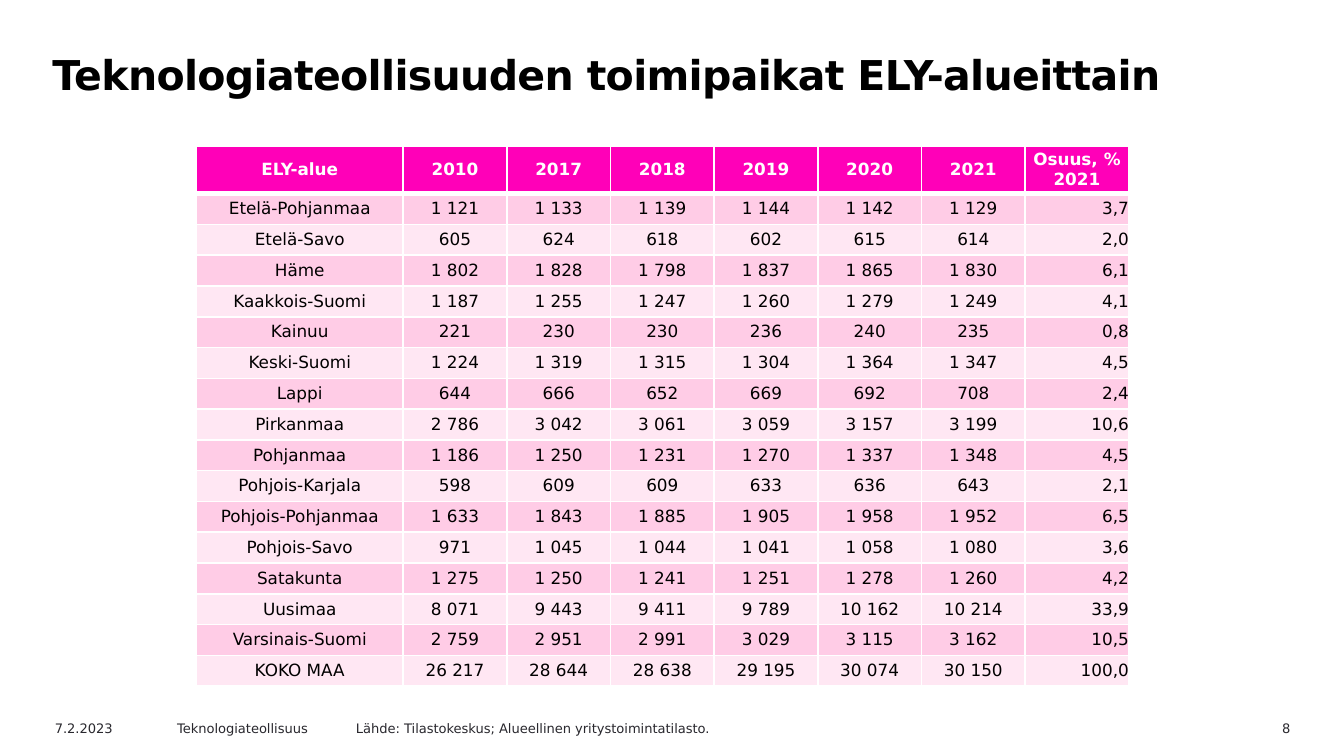
from copy import deepcopy
from dataclasses import dataclass

from lxml.etree import SubElement
from pptx import Presentation
from pptx.dml.color import RGBColor
from pptx.enum.text import MSO_ANCHOR, PP_ALIGN
from pptx.oxml.ns import qn
from pptx.util import Inches, Pt


@dataclass(frozen=True)
class Theme:
    font: str = "DejaVu Sans"
    black: str = "000000"
    white: str = "FFFFFF"
    footer: str = "29282E"
    header: str = "FF00B8"
    bands: tuple = ("FFCCE6", "FFE7F3")
    title_size: float = 22
    table_size: float = 9
    footer_size: float = 7


THEME = Theme()

HEADINGS = ["ELY-alue", "2010", "2017", "2018", "2019", "2020", "2021", "Osuus, %\n2021"]
REGIONS = """\
Etelä-Pohjanmaa|1 121|1 133|1 139|1 144|1 142|1 129|3,7
Etelä-Savo|605|624|618|602|615|614|2,0
Häme|1 802|1 828|1 798|1 837|1 865|1 830|6,1
Kaakkois-Suomi|1 187|1 255|1 247|1 260|1 279|1 249|4,1
Kainuu|221|230|230|236|240|235|0,8
Keski-Suomi|1 224|1 319|1 315|1 304|1 364|1 347|4,5
Lappi|644|666|652|669|692|708|2,4
Pirkanmaa|2 786|3 042|3 061|3 059|3 157|3 199|10,6
Pohjanmaa|1 186|1 250|1 231|1 270|1 337|1 348|4,5
Pohjois-Karjala|598|609|609|633|636|643|2,1
Pohjois-Pohjanmaa|1 633|1 843|1 885|1 905|1 958|1 952|6,5
Pohjois-Savo|971|1 045|1 044|1 041|1 058|1 080|3,6
Satakunta|1 275|1 250|1 241|1 251|1 278|1 260|4,2
Uusimaa|8 071|9 443|9 411|9 789|10 162|10 214|33,9
Varsinais-Suomi|2 759|2 951|2 991|3 029|3 115|3 162|10,5
KOKO MAA|26 217|28 644|28 638|29 195|30 074|30 150|100,0"""

FOOTERS = [  # text, left, width, alignment
    ("8", 8.76, 0.94, PP_ALIGN.RIGHT),
    ("7.2.2023", 0.31, 1, PP_ALIGN.LEFT),
    ("Teknologiateollisuus", 1.22, 1.42, PP_ALIGN.LEFT),
    ("Lähde: Tilastokeskus; Alueellinen yritystoimintatilasto.", 2.55, 5.28, PP_ALIGN.LEFT),
]


def write(tf, text, size, color, bold=False, align=PP_ALIGN.LEFT, spacing=None):
    """Fill the first paragraph; a newline becomes a line break of the same size."""
    p = tf.paragraphs[0]
    p.text = text
    p.alignment = align
    for r in p.runs:
        r.font.name = THEME.font
        r.font.size = Pt(size)
        r.font.bold = bold
        r.font.color.rgb = RGBColor.from_string(color)
        if spacing is not None:
            r.font._element.set("spc", str(round(spacing * 100)))
    for br in p._p.findall(qn("a:br")):
        br.append(deepcopy(p.runs[0].font._element))
    return p


def add_title(s, text):
    sp = s.shapes.title
    sp.left, sp.top, sp.width, sp.height = map(Inches, (0.28, 0.31, 8.74, 0.71))
    tf = sp.text_frame
    tf.word_wrap = True
    tf.vertical_anchor = MSO_ANCHOR.TOP
    tf.margin_top = Inches(0.05)
    p = write(tf, text, THEME.title_size, THEME.black, bold=True, spacing=-0.33)
    p.line_spacing = Pt(27)
    p.space_before = Pt(0)
    p._p.get_or_add_pPr().set("marL", str(Inches(0.01)))


def add_footer(s, text, left, width, align):
    sp = s.shapes.add_textbox(Inches(left), Inches(5.31), Inches(width), Inches(0.18))
    sp.text_frame.word_wrap = True
    write(sp.text_frame, text, THEME.footer_size, THEME.footer, align=align)


def set_borders(cell, **widths):
    """Draw white borders; sides not named are 1 pt wide."""
    tcPr = cell._tc.get_or_add_tcPr()
    for i, side in enumerate("LRTB"):
        ln = SubElement(tcPr, qn(f"a:ln{side}"), w=str(Pt(widths.get(side, 1))))
        fill = SubElement(ln, qn("a:solidFill"))
        SubElement(fill, qn("a:srgbClr"), val=THEME.white)
        tcPr.insert(i, ln)


def fill_cell(cell, text, row, last):
    header = row == 0
    cell.margin_left = cell.margin_right = cell.margin_top = cell.margin_bottom = 0
    cell.vertical_anchor = MSO_ANCHOR.MIDDLE
    cell.fill.solid()
    color = THEME.header if header else THEME.bands[(row - 1) % 2]
    cell.fill.fore_color.rgb = RGBColor.from_string(color)
    set_borders(cell, T=3 if row == 1 else 1, B=3 if header else 1)
    write(cell.text_frame, text, THEME.table_size,
          THEME.white if header else THEME.black, bold=header,
          align=PP_ALIGN.RIGHT if last and not header else PP_ALIGN.CENTER)


def add_region_table(s, rows):
    width, height, name_width, header_height = map(Inches, (6.94, 4.02, 1.54, 0.35))
    n_rows, n_cols = len(rows), len(rows[0])
    table = s.shapes.add_table(n_rows, n_cols, Inches(1.46), Inches(1.09), width, height).table
    for c, column in enumerate(table.columns):
        column.width = (width - name_width) // (n_cols - 1) if c else name_width
    for r, row in enumerate(table.rows):
        row.height = (height - header_height) // (n_rows - 1) if r else header_height
        for c, text in enumerate(rows[r]):
            fill_cell(table.cell(r, c), text, r, last=c == n_cols - 1)


def main():
    prs = Presentation()
    prs.slide_width = Inches(10)
    prs.slide_height = prs.slide_width * 9 // 16
    s = prs.slides.add_slide(prs.slide_layouts[5])
    add_title(s, "Teknologiateollisuuden toimipaikat ELY-alueittain")
    for footer in FOOTERS:
        add_footer(s, *footer)
    add_region_table(s, [HEADINGS] + [line.split("|") for line in REGIONS.splitlines()])
    prs.save("out.pptx")


if __name__ == "__main__":
    main()
